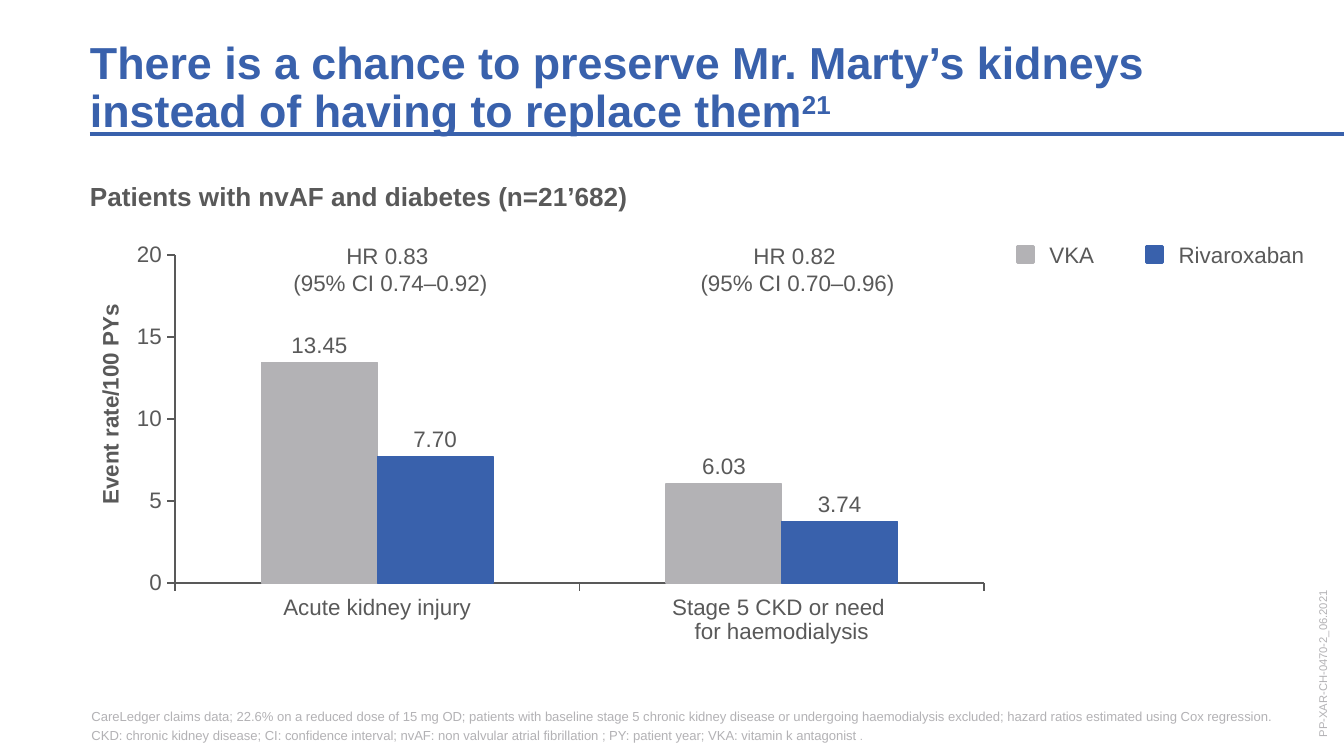
from lxml import etree
from pptx import Presentation
from pptx.chart.data import CategoryChartData
from pptx.dml.color import RGBColor
from pptx.enum.chart import XL_CHART_TYPE, XL_LABEL_POSITION, XL_TICK_MARK
from pptx.enum.shapes import MSO_CONNECTOR, MSO_SHAPE
from pptx.enum.text import MSO_ANCHOR, PP_ALIGN
from pptx.oxml.ns import qn
from pptx.util import Pt

COLUMNS = XL_CHART_TYPE.COLUMN_CLUSTERED
ABOVE_BAR = XL_LABEL_POSITION.OUTSIDE_END
TICK_OUT = XL_TICK_MARK.OUTSIDE
STRAIGHT = MSO_CONNECTOR.STRAIGHT
RECTANGLE = MSO_SHAPE.RECTANGLE
TOP, MIDDLE, BOTTOM = MSO_ANCHOR.TOP, MSO_ANCHOR.MIDDLE, MSO_ANCHOR.BOTTOM
LEFT, CENTER = PP_ALIGN.LEFT, PP_ALIGN.CENTER

BLUE, GREY, INK = "3961AC", "B3B2B5", "595959"


def rgb(value):
    return RGBColor.from_string(value)


def place(element, index, **fractions):
    for old in element.findall(qn("c:layout")):
        element.remove(old)
    layout = etree.Element(qn("c:layout"))
    manual = etree.SubElement(layout, qn("c:manualLayout"))
    for name, value in fractions.items():
        etree.SubElement(manual, qn(f"c:{name}")).set("val", str(value))
    element.insert(index, layout)


class SlideBuilder:
    font_name = "Arial"

    def __init__(self, slide):
        self.slide = slide

    def style(self, font, size, color, bold=False):
        font.name = self.font_name
        font.size = Pt(size)
        font.bold = bold
        font.color.rgb = rgb(color)

    def text(self, box, paragraphs, size, color, bold=False, anchor=TOP, align=LEFT,
             insets=(0, 0), wrap=True, after=0, spacing=1.0, rotation=0):
        shape = self.slide.shapes.add_textbox(*map(Pt, box))
        shape.rotation = rotation
        frame = shape.text_frame
        frame.text = "\n".join(paragraphs)
        frame.word_wrap = wrap
        frame.vertical_anchor = anchor
        frame.margin_left = frame.margin_right = Pt(insets[0])
        frame.margin_top = frame.margin_bottom = Pt(insets[1])
        for paragraph in frame.paragraphs:
            paragraph.alignment = align
            paragraph.space_after = Pt(after)
            paragraph.line_spacing = spacing
            for run in paragraph.runs:
                self.style(run.font, size, color, bold)
        return frame

    def add_run(self, paragraph, content, size, color, bold=False):
        run = paragraph.add_run()
        run.text = content
        self.style(run.font, size, color, bold)
        return run

    def swatch(self, box, color):
        shape = self.slide.shapes.add_shape(RECTANGLE, *map(Pt, box))
        shape.shadow.inherit = False
        shape.fill.solid()
        shape.fill.fore_color.rgb = rgb(color)
        shape.line.color.rgb = rgb(color)
        shape.line.width = Pt(1.5)

    def rule(self, start, end, color, width):
        line = self.slide.shapes.add_connector(STRAIGHT, *map(Pt, start + end))
        line.line.color.rgb = rgb(color)
        line.line.width = Pt(width)
        etree.SubElement(line._element.spPr, qn("a:effectLst"))

    def axis(self, axis, number_format):
        axis.has_major_gridlines = False
        axis.major_tick_mark = TICK_OUT
        axis.format.line.color.rgb = rgb(INK)
        axis.format.line.width = Pt(1)
        axis.tick_labels.number_format = number_format
        axis.tick_labels.number_format_is_linked = False
        self.style(axis.tick_labels.font, 12, INK)

    def column_chart(self, box, categories, series_values, colors, value_title):
        data = CategoryChartData()
        data.categories = categories
        for name, values in series_values.items():
            data.add_series(name, values)
        chart = self.slide.shapes.add_chart(COLUMNS, *map(Pt, box), data).chart
        chart.has_legend = False
        chart.has_title = False
        self.style(chart.font, 12, INK)

        self.axis(chart.category_axis, "General")
        rate_axis = chart.value_axis
        self.axis(rate_axis, "0")
        rate_axis.minimum_scale, rate_axis.maximum_scale = 0, 20
        rate_axis.major_unit = 5
        title = rate_axis.axis_title
        title.text_frame.text = value_title
        self.style(title.text_frame.paragraphs[0].runs[0].font, 12, INK, True)
        place(title._element, 1, xMode="edge", yMode="edge", x=0.12, y=0.23)

        plot = chart.plots[0]
        plot.gap_width, plot.overlap = 150, 0
        plot.vary_by_categories = False
        for series, color in zip(plot.series, colors):
            series.format.fill.solid()
            series.format.fill.fore_color.rgb = rgb(color)
            series.format.line.color.rgb = rgb(color)
            series.format.line.width = Pt(0.75)
            labels = series.data_labels
            labels.show_value = True
            labels.position = ABOVE_BAR
            labels.number_format = "#,##0.00"
            labels.number_format_is_linked = False
            self.style(labels.font, 12, INK)
        place(chart._chartSpace.chart.plotArea, 0, layoutTarget="inner",
              xMode="edge", yMode="edge", x=0.19, y=0.141, w=0.684, h=0.649)


def main():
    presentation = Presentation()
    presentation.slide_width, presentation.slide_height = Pt(720), Pt(405)
    builder = SlideBuilder(presentation.slides.add_slide(presentation.slide_layouts[6]))

    builder.column_chart(
        (-26.6, 98.6, 633.6, 370.7 - 100),
        ["Acute kidney injury", "Stage 5 CKD or need \nfor haemodialysis"],
        {"VKA": (13.45, 6.03), "Rivaroxaban": (7.70, 3.74)},
        (GREY, BLUE), "Event rate/100 PYs")

    headline = builder.text(
        (48.2, 20.9, 651.6, 52.6),
        ["There is a chance to preserve Mr. Marty’s kidneys instead of having to replace them"],
        24, BLUE, bold=True, anchor=BOTTOM, spacing=0.9)
    reference = builder.add_run(headline.paragraphs[0], "21", 24, BLUE, True)
    reference.font._element.set("baseline", "30000")
    builder.rule((48.2, 72), (720, 72), BLUE, 2.25)

    builder.text((48.2, 96.5, 434, 17.3), ["Patients with nvAF and diabetes (n=21’682)"],
                 14, INK, bold=True)

    for left, width, drug, color in ((545, 41, "VKA", GREY), (614.2, 82, "Rivaroxaban", BLUE)):
        builder.swatch((left, 132.2, 8.6, 8.6), color)
        builder.text((left + 10.1, 125.3, width, 22.3), [drug], 12, INK,
                     anchor=MIDDLE, insets=(7.2, 3.6), wrap=False)

    for left, hazard_ratio in ((103, "HR 0.83 \v(95% CI 0.74–0.92)"),
                               (321.1, "HR 0.82 \v(95% CI 0.70–0.96)")):
        builder.text((left, 126, 212.4, 36), [hazard_ratio], 12, INK,
                     align=CENTER, insets=(7.2, 3.6))

    footnote = builder.text(
        (49, 379.4, 651.6, 18.7),
        ["CareLedger claims data; 22.6% on a reduced dose of 15 mg OD; patients with baseline "
         "stage 5 chronic kidney disease or undergoing haemodialysis excluded; hazard ratios "
         "estimated using Cox regression.",
         "CKD: chronic kidney disease; CI: confidence interval; nvAF: non valvular atrial "
         "fibrillation ; PY: patient year; VKA: vitamin k antagonist "],
        7, GREY, anchor=BOTTOM, after=2)
    builder.add_run(footnote.paragraphs[-1], ".", 6, GREY)

    builder.text((658.1, 333.4, 100.8, 22.3), ["PP-XAR-CH-0470-2_06.2021"], 6, GREY,
                 anchor=MIDDLE, rotation=270)

    presentation.save("out.pptx")


if __name__ == "__main__":
    main()
